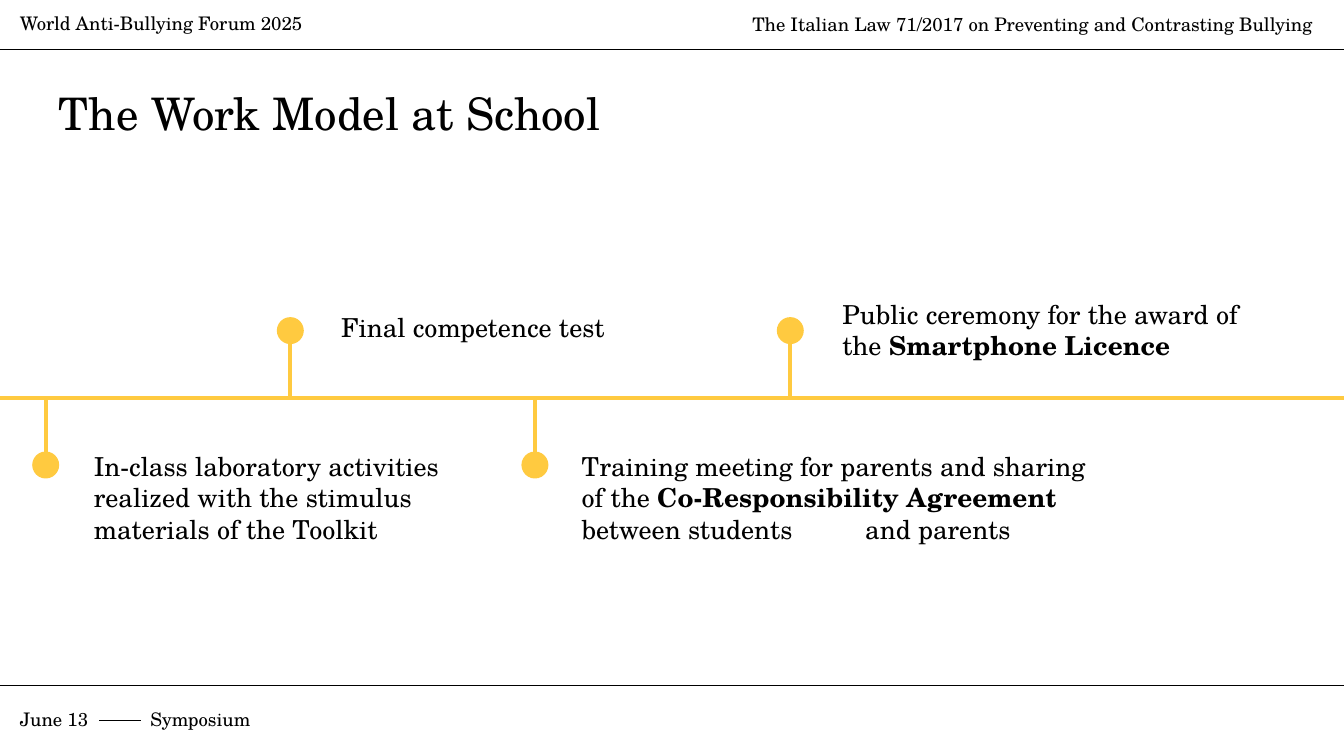
from lxml import etree
from pptx import Presentation
from pptx.dml.color import RGBColor
from pptx.enum import shapes, text
from pptx.oxml import ns
from pptx.util import Inches, Pt

BLACK = RGBColor(0x00, 0x00, 0x00)
WHITE = RGBColor(0xFF, 0xFF, 0xFF)
YELLOW = RGBColor(0xFF, 0xCA, 0x40)
FONT = "TeX Gyre Schola"
WIDTH = 10
HEIGHT = WIDTH * 9 / 16

# Stem position, label left, top, width and height, label spans, tab stop
STEPS_ABOVE = [
    (2.16, (2.44, 2.22, 2.66, 0.44), [("Final competence test", False)], None),
    (5.88, (6.17, 2.12, 3.44, 0.67),
     [("Public ceremony for the award of the ", False),
      ("Smartphone Licence", True)], None),
]
STEPS_BELOW = [
    (0.34, (0.6, 3.25, 2.87, 1.14),
     [("In-class laboratory activities realized with the stimulus "
       "materials of the Toolkit", False)], None),
    (3.98, (4.23, 3.25, 4.1, 1.38),
     [("Training meeting for parents and sharing of the ", False),
      ("Co-Responsibility Agreement ", True),
      ("between students\tand parents", False)], 2.11),
]


def add_rule(page, start, end, color, weight):
    rule = page.shapes.add_connector(
        shapes.MSO_CONNECTOR.STRAIGHT, *map(Inches, (*start, *end)))
    rule.line.color.rgb = color
    rule.line.width = Pt(weight)
    etree.SubElement(rule._element.spPr, ns.qn("a:effectLst"))


def set_tab_stop(para, position):
    stops = etree.SubElement(para._p.get_or_add_pPr(), ns.qn("a:tabLst"))
    etree.SubElement(stops, ns.qn("a:tab"), pos=str(Inches(position)), algn="l")


def add_text(page, box, spans, size, align=text.PP_ALIGN.LEFT,
             spacing=None, tab_stop=None):
    """Write one paragraph from (wording, bold) spans."""
    frame = page.shapes.add_textbox(*map(Inches, box)).text_frame
    frame.word_wrap = True
    frame.margin_left = frame.margin_right = Inches(0.1)
    frame.margin_top = frame.margin_bottom = Inches(0.1)
    para = frame.paragraphs[0]
    para.alignment = align
    if spacing:
        para.line_spacing = spacing
    if tab_stop:
        set_tab_stop(para, tab_stop)
    para.font.name = FONT
    para.font.size = Pt(size)
    para.font.color.rgb = BLACK
    for wording, bold in spans:
        span = para.add_run()
        span.text = wording
        span.font.bold = bold


def add_header(page, left, top, width):
    add_text(page, (left + 0.05, top + 0.01, 3.03, 0.16),
             [("World Anti-Bullying Forum 2025", False)], 10)
    add_text(page, (left + width - 4.86, top + 0.01, 4.72, 0.16),
             [("The Italian Law 71/2017 on Preventing and Contrasting Bullying",
               False)], 10, text.PP_ALIGN.RIGHT, 1.15)
    add_rule(page, (left, top + 0.37), (left + width, top + 0.37), BLACK, 0.75)


def add_footer(page, left, top, width):
    add_rule(page, (left, top), (left + width, top), BLACK, 0.75)
    add_text(page, (left + 0.05, top + 0.08, 2.17, 0.3),
             [("June 13\tSymposium", False)], 10, tab_stop=0.97)
    add_rule(page, (left + 0.74, top + 0.26), (left + 1.05, top + 0.26),
             BLACK, 0.75)


def add_milestone(page, x, axis, direction):
    """Draw a stem and dot; direction is -1 above the axis and 1 below."""
    dot = 0.18
    center = axis + direction * 0.5
    add_rule(page, (x, center), (x, axis), YELLOW, 2.25)
    marker = page.shapes.add_shape(
        shapes.MSO_SHAPE.OVAL,
        *map(Inches, (x - dot / 2, center - dot / 2, dot, dot)))
    marker.shadow.inherit = False
    marker.fill.solid()
    marker.fill.fore_color.rgb = YELLOW
    marker.line.color.rgb = YELLOW
    marker.line.width = Pt(1.5)


def add_timeline(page, left, axis, width):
    add_rule(page, (left, axis), (left + width, axis), YELLOW, 2.25)
    for direction, steps in ((-1, STEPS_ABOVE), (1, STEPS_BELOW)):
        for x, (label_left, *label_rest), spans, tab_stop in steps:
            add_milestone(page, left + x, axis, direction)
            add_text(page, (left + label_left, *label_rest), spans, 14,
                     tab_stop=tab_stop)


def main():
    deck = Presentation()
    deck.slide_width, deck.slide_height = Inches(WIDTH), Inches(HEIGHT)
    page = deck.slides.add_slide(deck.slide_layouts[6])
    page.background.fill.solid()
    page.background.fill.fore_color.rgb = WHITE
    add_header(page, 0, 0, WIDTH)
    add_footer(page, 0, 5.1, WIDTH)
    add_text(page, (0.34, 0.54, 9.32, 0.65),
             [("The Work Model at School", False)], 24)
    add_timeline(page, 0, 2.96, WIDTH)
    deck.save("out.pptx")


if __name__ == "__main__":
    main()
